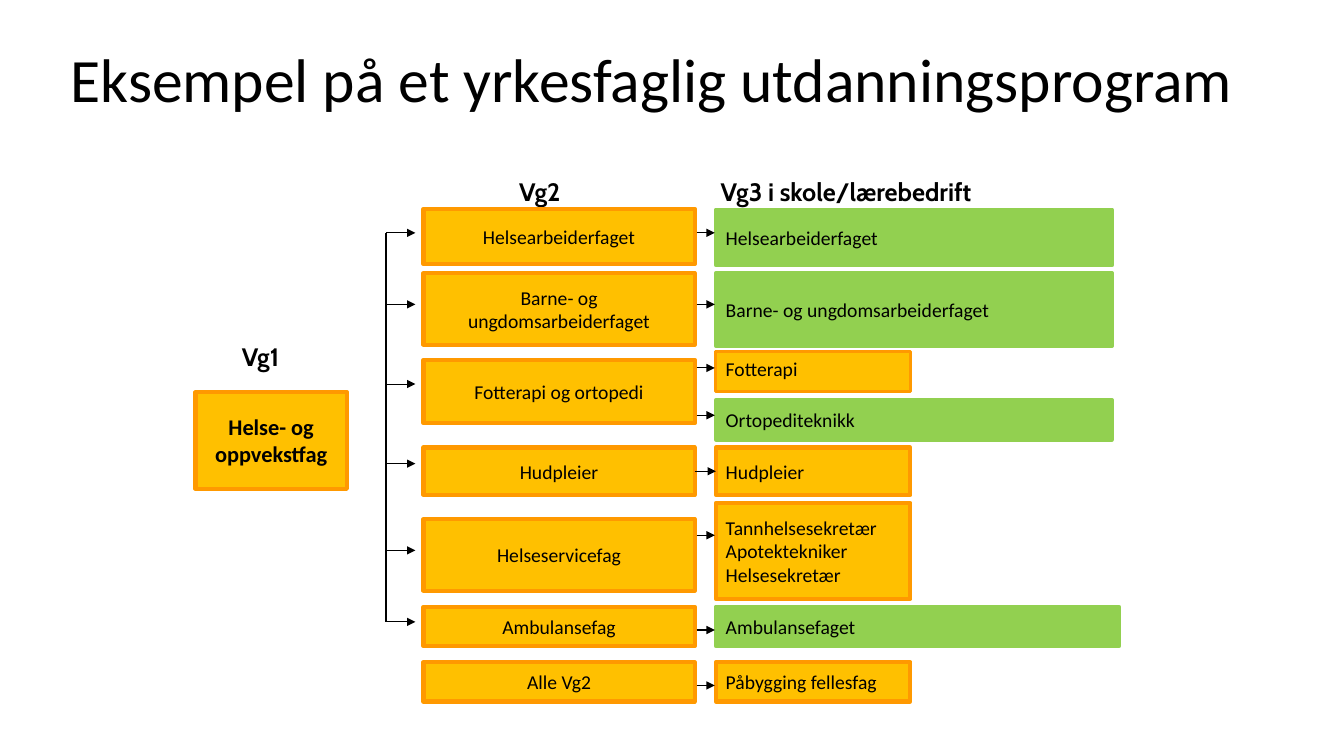
from lxml import etree
from pptx import Presentation
from pptx.dml.color import RGBColor
from pptx.enum import shapes, text
from pptx.oxml import ns
from pptx.util import Inches, Pt

COLORS = {"black": "000000", "amber": "FFC000", "orange": "FF9900", "green": "92D050"}
BORDERS = {"amber": "orange", "green": "green"}
LEFT, CENTER = text.PP_ALIGN.LEFT, text.PP_ALIGN.CENTER
MIDDLE, TOP = text.MSO_ANCHOR.MIDDLE, text.MSO_ANCHOR.TOP

VG2_LEFT, VG2_WIDTH = 4.2, 2.69
VG3_LEFT, SCHOOL_WIDTH, COMPANY_WIDTH = 7.1, 1.93, 3.93
TRUNK_X, BRANCH_END = 3.83, 4.12

prs = Presentation()
prs.slide_width, prs.slide_height = Inches(13.33), Inches(7.5)
slide = prs.slides.add_slide(prs.slide_layouts[5])


def add_box(label, left, top, width, height, fill, align, size=14, bold=False):
    box = slide.shapes.add_shape(
        shapes.MSO_SHAPE.RECTANGLE, Inches(left), Inches(top), Inches(width), Inches(height))
    box.shadow.inherit = False
    box.fill.solid()
    box.fill.fore_color.rgb = RGBColor.from_string(COLORS[fill])
    box.line.color.rgb = RGBColor.from_string(COLORS[BORDERS[fill]])
    box.line.width = Pt(3)
    box.text_frame.text = label
    box.text_frame.word_wrap = True
    box.text_frame.vertical_anchor = MIDDLE
    for paragraph in box.text_frame.paragraphs:
        paragraph.alignment = align
        paragraph.font.name = "Calibri"
        paragraph.font.size = Pt(size)
        paragraph.font.bold = bold
        paragraph.font.color.rgb = RGBColor.from_string(COLORS["black"])
    return box


def add_line(x1, y1, x2, y2, width=0.75, arrow=True):
    line = slide.shapes.add_connector(
        shapes.MSO_CONNECTOR.STRAIGHT, Inches(x1), Inches(y1), Inches(x2), Inches(y2))
    line.line.color.rgb = RGBColor.from_string(COLORS["black"])
    line.line.width = Pt(width)
    if arrow:
        etree.SubElement(line.line._get_or_add_ln(), ns.qn("a:tailEnd"), type="triangle")
    etree.SubElement(line._element.spPr, ns.qn("a:effectLst"))
    return line


title = slide.shapes.title
title.left, title.top, title.width, title.height = (
    Inches(0.6), Inches(0.36), Inches(12.21), Inches(1.18))
title.text_frame.text = "Eksempel på et yrkesfaglig utdanningsprogram"
title.text_frame.auto_size = text.MSO_AUTO_SIZE.NONE
title.text_frame.vertical_anchor = TOP
heading = title.text_frame.paragraphs[0]
heading.alignment = LEFT
heading.font.name = "Calibri"
heading.font.size = Pt(44)
heading.font.color.rgb = RGBColor.from_string(COLORS["black"])

levels = [
    ("\tVg2\tVg3 i skole/lærebedrift", 4.05, 1.7, 7.62, 0.4, MIDDLE, (1, 3)),
    ("Vg1", 2.3, 3.34, 0.8, 0.47, TOP, ()),
]
for label, left, top, width, height, anchor, tabs in levels:
    level = slide.shapes.add_textbox(Inches(left), Inches(top), Inches(width), Inches(height))
    level.text_frame.text = label
    level.text_frame.word_wrap = True
    level.text_frame.vertical_anchor = anchor
    level_line = level.text_frame.paragraphs[0]
    if tabs:
        tab_list = etree.SubElement(level_line._p.get_or_add_pPr(), ns.qn("a:tabLst"))
        for stop in tabs:
            etree.SubElement(tab_list, ns.qn("a:tab"), pos=str(Inches(stop)), algn="l")
    for run in level_line.runs:
        run.font.name = "Cabin"
        run.font.size = Pt(18)
        run.font.bold = True
        run.font.color.rgb = RGBColor.from_string(COLORS["black"])

add_box("Helse- og oppvekstfag", 1.94, 3.89, 1.5, 0.96, "amber", CENTER, 16, True)

vg2_programmes = [
    ("Helsearbeiderfaget", 2.07, 0.55),
    ("Barne- og ungdomsarbeiderfaget", 2.71, 0.71),
    ("Fotterapi og ortopedi", 3.57, 0.63),
    ("Hudpleier", 4.44, 0.47),
    ("Helseservicefag", 5.15, 0.71),
    ("Ambulansefag", 6.02, 0.39),
    ("Alle Vg2", 6.57, 0.39),
]
vg2 = {label: add_box(label, VG2_LEFT, top, VG2_WIDTH, height, "amber", CENTER)
       for label, top, height in vg2_programmes}

vg3_programmes = [
    ("Helsearbeiderfaget", 2.08, 0.55, COMPANY_WIDTH, "green", 2.31),
    ("Barne- og ungdomsarbeiderfaget", 2.71, 0.72, COMPANY_WIDTH, "green", 3.02),
    ("Fotterapi", 3.49, 0.39, SCHOOL_WIDTH, "amber", 3.65),
    ("Ortopediteknikk", 3.97, 0.39, COMPANY_WIDTH, "green", 4.12),
    ("Hudpleier", 4.44, 0.47, SCHOOL_WIDTH, "amber", 4.68),
    ("Tannhelsesekretær Apotektekniker\nHelsesekretær", 4.99, 0.95, SCHOOL_WIDTH, "amber", 5.31),
    ("Ambulansefaget", 6.02, 0.39, 4, "green", 6.25),
    ("Påbygging fellesfag", 6.57, 0.39, SCHOOL_WIDTH, "amber", 6.8),
]
vg3, vg3_arrows = {}, {}
for label, top, height, width, fill, arrow_y in vg3_programmes:
    vg3[label] = add_box(label, VG3_LEFT, top, width, height, fill, LEFT)
    vg3_arrows[label] = add_line(6.91, arrow_y, 7.09, arrow_y)
vg3["Fotterapi"].text_frame.vertical_anchor = TOP
vg3["Fotterapi"].line.width = Pt(2.25)
vg3_arrows["Hudpleier"].begin_connect(vg2["Hudpleier"], 3)
vg3_arrows["Hudpleier"].end_connect(vg3["Hudpleier"], 1)

branches = [2.31, 3.02, 3.81, 4.6, 5.46, 6.17]
add_line(TRUNK_X, branches[0], TRUNK_X, branches[-1], 1, arrow=False)
for branch_y in branches:
    add_line(TRUNK_X, branch_y, BRANCH_END, branch_y, 1 if branch_y == 4.6 else 0.75)

prs.save("out.pptx")
